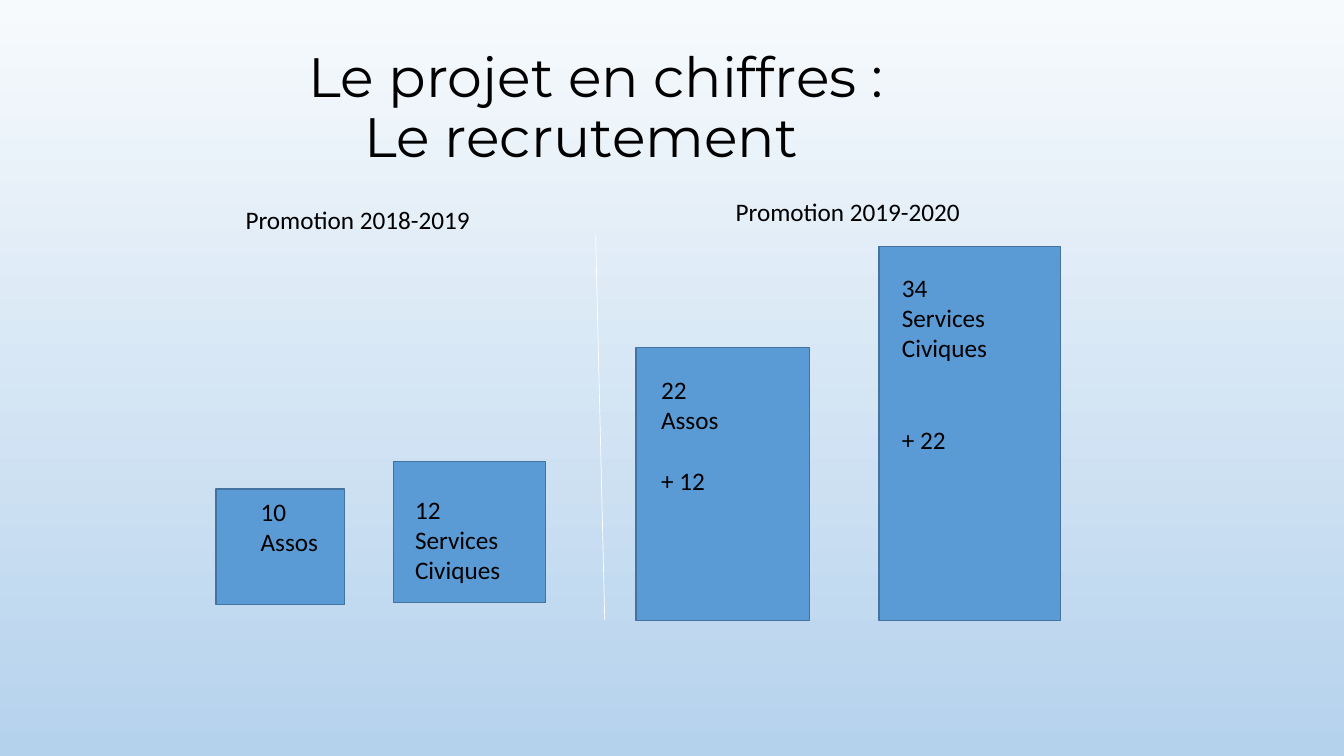
"""Build the recruitment figures slide."""
from dataclasses import dataclass

from lxml.etree import SubElement
from pptx import Presentation
from pptx.dml.color import RGBColor
from pptx.enum.shapes import MSO_CONNECTOR as Connector, MSO_SHAPE as Preset
from pptx.enum.text import MSO_ANCHOR as Anchor, PP_ALIGN as Align
from pptx.oxml.ns import qn
from pptx.slide import Slide
from pptx.util import Cm, Pt

BLACK = RGBColor(0x00, 0x00, 0x00)
WHITE = RGBColor(0xFF, 0xFF, 0xFF)
BAR_BLUE = RGBColor(0x5B, 0x9B, 0xD5)
EDGE_BLUE = RGBColor(0x43, 0x73, 0x9E)
SKY_TOP = RGBColor(0xF7, 0xFA, 0xFD)
SKY_BOTTOM = RGBColor(0xB5, 0xD2, 0xEC)
LINE_HEIGHT = 22


@dataclass(frozen=True)
class Area:
    left: float
    top: float
    width: float
    height: float

    def lengths(self) -> tuple[Cm, Cm, Cm, Cm]:
        return Cm(self.left), Cm(self.top), Cm(self.width), Cm(self.height)


@dataclass(frozen=True)
class Bar:
    area: Area
    label_area: Area
    lines: tuple[str, ...]
    growth: str = ""
    gap_lines: int = 0


PROMOTIONS = {
    "Promotion 2018-2019": Area(5.94, 5.03, 7.04, 1.02),
    "Promotion 2019-2020": Area(18.29, 4.83, 10.74, 1.02),
}
BARS = (
    Bar(Area(5.44, 12.32, 3.25, 2.92), Area(6.32, 12.37, 3.25, 1.8), ("10", "Assos")),
    Bar(Area(9.91, 11.63, 3.84, 3.56), Area(10.21, 12.32, 3.2, 2.57),
        ("12", "Services", "Civiques")),
    Bar(Area(16.03, 8.76, 4.37, 6.88), Area(16.41, 9.3, 3.71, 3.33),
        ("22", "Assos"), "+ 12", 1),
    Bar(Area(22.15, 6.22, 4.57, 9.42), Area(22.48, 6.73, 4.01, 4.88),
        ("34", "Services", "Civiques"), "+ 22", 2),
)


def add_text(page: Slide, area: Area, lines: tuple[str, ...], *,
             font: str = "Calibri", size: float = 18, align: Align = Align.LEFT,
             anchor: Anchor = Anchor.TOP, spacing: float = 1.0,
             last_gap: float = 0, last_right_margin: float = 0) -> None:
    frame = page.shapes.add_textbox(*area.lengths()).text_frame
    frame.word_wrap = True
    frame.vertical_anchor = anchor
    for index, line in enumerate(lines):
        para = frame.add_paragraph() if index else frame.paragraphs[0]
        para.alignment = align
        para.line_spacing = spacing
        span = para.add_run()
        span.text = line
        span.font.name = font
        span.font.size = Pt(size)
        span.font.color.rgb = BLACK
    if last_gap:
        para.space_before = Pt(last_gap)
    if last_right_margin:
        para._p.get_or_add_pPr().set("marR", str(Cm(last_right_margin)))


def add_bar(page: Slide, bar: Bar) -> None:
    box = page.shapes.add_shape(Preset.RECTANGLE, *bar.area.lengths())
    box.shadow.inherit = False
    box.fill.solid()
    box.fill.fore_color.rgb = BAR_BLUE
    box.line.color.rgb = EDGE_BLUE
    box.line.width = Pt(1)
    lines = bar.lines + ((bar.growth,) if bar.growth else ())
    add_text(page, bar.label_area, lines, last_gap=bar.gap_lines * LINE_HEIGHT)


def add_divider(page: Slide) -> None:
    divider = page.shapes.add_connector(
        Connector.STRAIGHT, Cm(15.01), Cm(5.92), Cm(15.24), Cm(15.62))
    divider.line.color.rgb = WHITE
    divider.line.width = Pt(0.5)
    SubElement(divider._element.spPr, qn("a:effectLst"))


def paint_background(page: Slide) -> None:
    fill = page.background.fill
    fill.gradient()
    fill.gradient_angle = 270
    for stop, color in zip(fill.gradient_stops, (SKY_TOP, SKY_BOTTOM)):
        stop.color.rgb = color


def main() -> None:
    deck = Presentation()
    deck.slide_width, deck.slide_height = Cm(33.87), Cm(19.05)
    page = deck.slides.add_slide(deck.slide_layouts[6])
    paint_background(page)
    add_text(page, Area(2.11, 1.27, 25.81, 3),
             ("Le projet en chiffres :", "Le recrutement"),
             font="Montserrat", size=39.6, align=Align.CENTER,
             anchor=Anchor.MIDDLE, spacing=0.9, last_right_margin=0.73)
    for caption, area in PROMOTIONS.items():
        add_text(page, area, (caption,))
    add_divider(page)
    for bar in BARS:
        add_bar(page, bar)
    deck.save("out.pptx")


if __name__ == "__main__":
    main()
